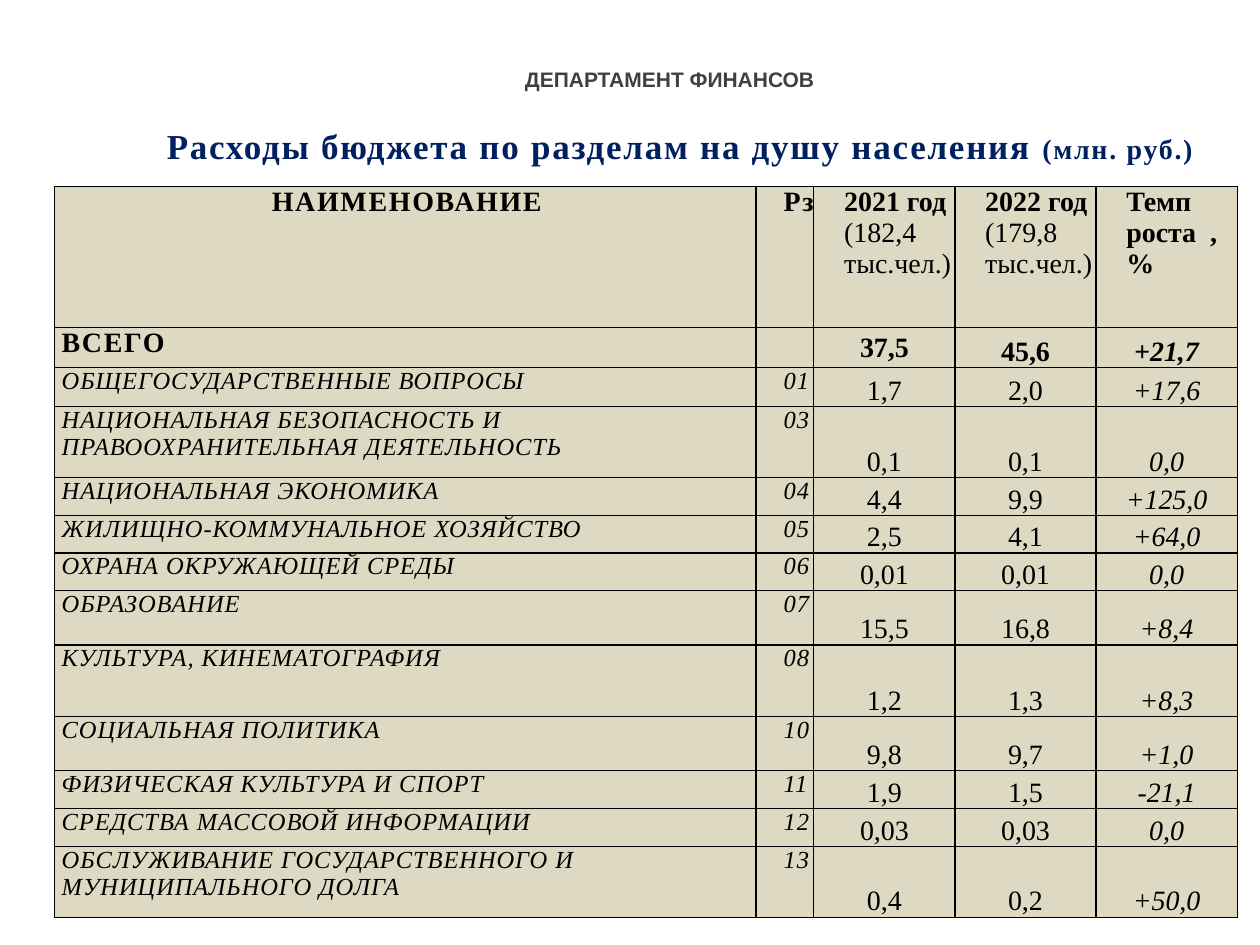
import pptx
import pptx.dml.color
import pptx.enum.shapes
import pptx.enum.text
import pptx.oxml
import pptx.oxml.ns
import pptx.util

Inches = pptx.util.Inches
Pt = pptx.util.Pt
RGBColor = pptx.dml.color.RGBColor
ALIGN = pptx.enum.text.PP_ALIGN
ANCHOR = pptx.enum.text.MSO_ANCHOR

BLACK = RGBColor(0x00, 0x00, 0x00)
WHITE = RGBColor(0xFF, 0xFF, 0xFF)
GREY = RGBColor(0x40, 0x40, 0x40)
NAVY = RGBColor(0x00, 0x20, 0x60)
SAND = RGBColor(0xDD, 0xD9, 0xC3)

COLUMNS = [5.57, 0.46, 1.12, 1.12, 1.12]
ROWS = [1.12, 0.32, 0.31, 0.56, 0.3, 0.3, 0.3, 0.43, 0.57, 0.43, 0.3, 0.3, 0.56]
YEARS = [("2021 год ", "(182,4 тыс.чел.)"), ("2022 год ", "(179,8 тыс.чел.)")]
TOTAL = ["ВСЕГО", "", "37,5", "45,6", "+21,7"]
SECTIONS = [
    ("ОБЩЕГОСУДАРСТВЕННЫЕ ВОПРОСЫ", "01", "1,7", "2,0", "+17,6"),
    ("НАЦИОНАЛЬНАЯ БЕЗОПАСНОСТЬ И ПРАВООХРАНИТЕЛЬНАЯ ДЕЯТЕЛЬНОСТЬ", "03", "0,1", "0,1", "0,0"),
    ("НАЦИОНАЛЬНАЯ ЭКОНОМИКА", "04", "4,4", "9,9", "+125,0"),
    ("ЖИЛИЩНО-КОММУНАЛЬНОЕ ХОЗЯЙСТВО", "05", "2,5", "4,1", "+64,0"),
    ("ОХРАНА ОКРУЖАЮЩЕЙ СРЕДЫ", "06", "0,01", "0,01", "0,0"),
    ("ОБРАЗОВАНИЕ", "07", "15,5", "16,8", "+8,4"),
    ("КУЛЬТУРА, КИНЕМАТОГРАФИЯ", "08", "1,2", "1,3", "+8,3"),
    ("СОЦИАЛЬНАЯ ПОЛИТИКА", "10", "9,8", "9,7", "+1,0"),
    ("ФИЗИЧЕСКАЯ КУЛЬТУРА И СПОРТ", "11", "1,9", "1,5", "-21,1"),
    ("СРЕДСТВА МАССОВОЙ ИНФОРМАЦИИ", "12", "0,03", "0,03", "0,0"),
    ("ОБСЛУЖИВАНИЕ ГОСУДАРСТВЕННОГО И МУНИЦИПАЛЬНОГО ДОЛГА", "13", "0,4", "0,2", "+50,0"),
]


class SlideBuilder:
    font = {"name": "Times New Roman", "size": Pt(16), "bold": False, "italic": False}
    border = Pt(0.75)

    def __init__(self, slide):
        self.s = slide

    def add_runs(self, p, runs, align=ALIGN.LEFT, indent=0):
        p.alignment = align
        if indent:
            p._p.get_or_add_pPr().set("marL", str(Inches(indent)))
        for text, style in runs:
            style = dict(style)
            spacing = style.pop("spacing", 0)
            color = style.pop("color", BLACK)
            r = p.add_run()
            r.text = text
            for key, value in {**self.font, **style}.items():
                setattr(r.font, key, value)
            r.font.color.rgb = color
            if spacing:
                r._r.get_or_add_rPr().set("spc", str(int(spacing * 100)))

    def text(self, box, runs):
        tf = self.s.shapes.add_textbox(*map(Inches, box)).text_frame
        tf.word_wrap = True
        tf.vertical_anchor = ANCHOR.MIDDLE
        self.add_runs(tf.paragraphs[0], runs, ALIGN.CENTER)

    def banner(self, box, runs):
        sp = self.s.shapes.add_shape(pptx.enum.shapes.MSO_SHAPE.RECTANGLE, *map(Inches, box))
        sp.shadow.inherit = False
        sp.fill.solid()
        sp.fill.fore_color.rgb = WHITE
        sp.line.fill.background()
        tf = sp.text_frame
        frame = {"word_wrap": True, "vertical_anchor": ANCHOR.TOP, "margin_left": 0,
                 "margin_top": 0, "margin_right": 0, "margin_bottom": 0}
        for key, value in frame.items():
            setattr(tf, key, value)
        self.add_runs(tf.paragraphs[0], runs, ALIGN.CENTER)

    def table(self, left, top, columns, rows):
        size = map(Inches, (left, top, sum(columns), sum(rows)))
        tbl = self.s.shapes.add_table(len(rows), len(columns), *size).table
        tbl.first_row = tbl.horz_banding = False
        for column, width in zip(tbl.columns, columns):
            column.width = Inches(width)
        for row, height in zip(tbl.rows, rows):
            row.height = Inches(height)
        return tbl

    def cell(self, cell, runs, align=ALIGN.LEFT, indent=0, anchor=ANCHOR.TOP, inset=0):
        margin = Inches(inset)
        frame = {"margin_left": margin, "margin_top": margin, "margin_right": margin,
                 "margin_bottom": 0, "vertical_anchor": anchor}
        for key, value in frame.items():
            setattr(cell, key, value)
        tcPr = cell._tc.get_or_add_tcPr()
        for side in "LRTB":
            tcPr.append(pptx.oxml.parse_xml(
                f'<a:ln{side} {pptx.oxml.ns.nsdecls("a")} w="{self.border}">'
                f'<a:solidFill><a:srgbClr val="{BLACK}"/></a:solidFill></a:ln{side}>'))
        cell.fill.solid()
        cell.fill.fore_color.rgb = SAND
        self.add_runs(cell.text_frame.paragraphs[0], runs, align, indent)

    def data_row(self, tbl, row, values, label, bold=False):
        for col, (text, indent) in enumerate(zip(values[:2], (0.06, 0.22))):
            self.cell(tbl.cell(row, col), [(text, label)] if text else [], indent=indent)
        for col, text in enumerate(values[2:], 2):
            anchor = ANCHOR.MIDDLE if bold and col == 2 else ANCHOR.BOTTOM
            style = {"bold": bold, "italic": col == 4}
            self.cell(tbl.cell(row, col), [(text, style)], ALIGN.CENTER, anchor=anchor, inset=0.01)


def main():
    prs = pptx.Presentation()
    prs.slide_width, prs.slide_height = Inches(10), Inches(7.5)
    b = SlideBuilder(prs.slides.add_slide(prs.slide_layouts[6]))
    bold = {"bold": True}
    spaced = {"bold": True, "spacing": 1}

    b.text((3.27, 0.39, 4.09, 0.47), [
        ("ДЕПАРТАМЕНТ ФИНАНСОВ", {"name": "Arial", "size": Pt(12), "bold": True, "color": GREY})])

    tbl = b.table(0.43, 1.48, COLUMNS, ROWS)
    b.cell(tbl.cell(0, 0), [("НАИМЕНОВАНИЕ", spaced)], ALIGN.CENTER, 0.03)
    b.cell(tbl.cell(0, 1), [("Рз", spaced)], indent=0.22)
    for col, (year, population) in enumerate(YEARS, 2):
        b.cell(tbl.cell(0, col), [(year, bold), (population, {})], indent=0.24)
    b.cell(tbl.cell(0, 4), [("Темп роста  , %", bold)], indent=0.24)
    b.data_row(tbl, 1, TOTAL, spaced, bold=True)
    section = {"size": Pt(14), "italic": True, "spacing": 0.5}
    for row, values in enumerate(SECTIONS, 2):
        b.data_row(tbl, row, values, section)

    title = {**spaced, "color": NAVY}
    b.banner((1.14, 0.99, 8.58, 0.47), [
        ("Расходы бюджета по разделам на душу населения ", {**title, "size": Pt(20)}),
        ("(млн. руб.) ", title)])
    prs.save("out.pptx")


if __name__ == "__main__":
    main()
